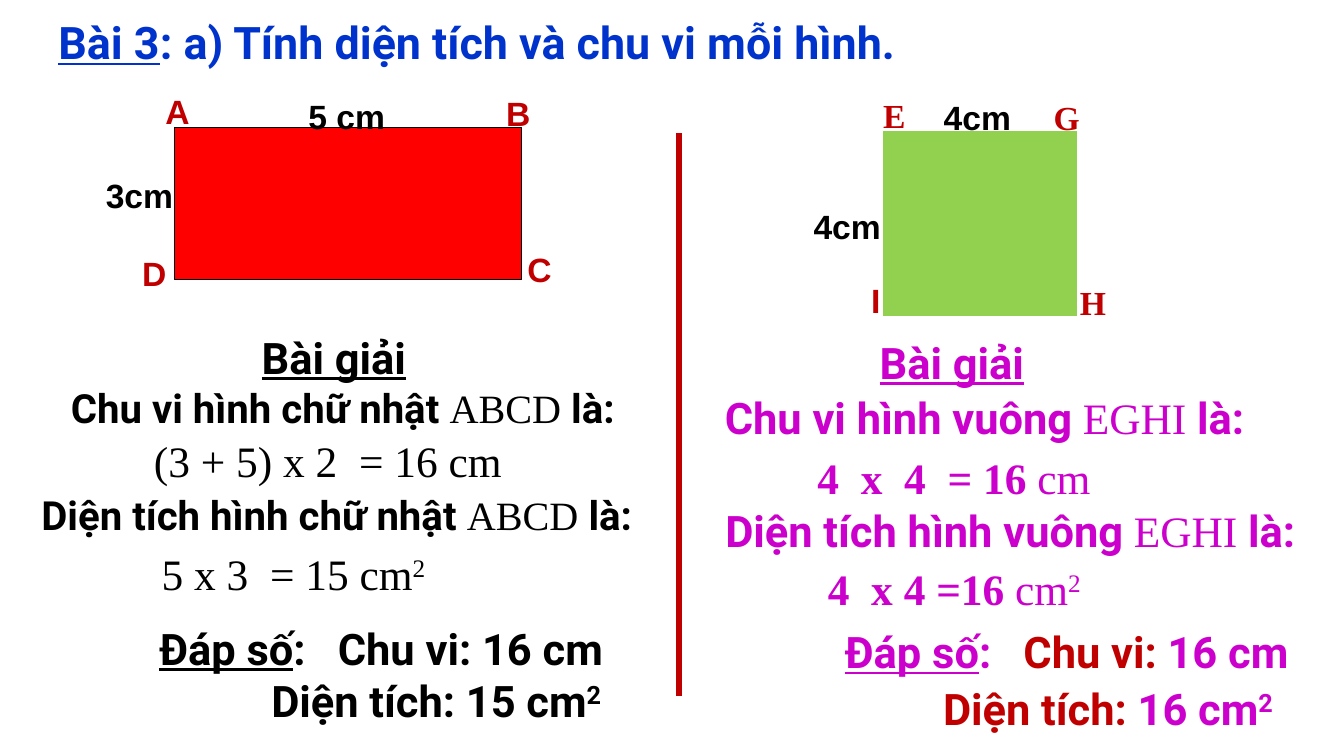
from dataclasses import dataclass
from lxml.etree import SubElement
from pptx import Presentation
from pptx.dml.color import RGBColor
from pptx.enum.shapes import MSO_CONNECTOR, MSO_SHAPE
from pptx.enum.text import PP_ALIGN as Align
from pptx.oxml.ns import qn
from pptx.util import Inches, Pt


@dataclass(frozen=True)
class Theme:
    blue: str = "0033CC"
    black: str = "000000"
    white: str = "FFFFFF"
    pink: str = "CC00CC"
    dark: str = "C00000"
    red: str = "FF0000"
    green: str = "92D050"
    sans: str = "Roboto"
    serif: str = "Times New Roman"
    plain: str = "Arial"
    title: float = 32
    body: float = 31
    small: float = 28.7
    label: float = 24


T = Theme()
# All places are left, top, width, height in percent of the slide.
# Run marks: b bold, u underline, t serif, s superscript, d dark red.
TITLE = ((3.6, 1.33, 85.15, 8.53),
         [("Bài 3", "bu"), (": a) Tính diện tích và chu vi mỗi hình.", "b")])

FIGURES = [
    ((12.98, 16.93, 25.81, 20), T.red, T.black, 0.75),
    ((65.64, 17.2, 14.55, 24.8), T.green, T.white, 1.5),
]

LABEL_H = 7.2
LABELS = [  # text, left, top, width, font
    ("A", 11.33, 11.07, 3.3, T.plain),
    ("B", 36.68, 11.33, 3.68, T.plain),
    ("C", 38.26, 32, 4.28, T.plain),
    ("D", 9.6, 32.53, 3.3, T.plain),
    ("E", 64.74, 11.6, 4.28, T.serif),
    ("G", 77.42, 11.87, 3.6, T.serif),
    ("H", 79.37, 36.4, 5.03, T.serif),
    ("I", 63.84, 36.13, 3.98, T.plain),
]
SIDES = [
    ("5 cm", 21.98, 11.73, 12.83, T.plain),
    ("3cm", 6.9, 22.27, 7.43, T.plain),
    ("4cm", 69.24, 11.87, 7.73, T.plain),
    ("4cm", 59.56, 26.27, 8.7, T.plain),
]

HEAD = [("Bài giải", "bu")]
LEFT = [  # place, line spacing, size, runs
    ((13.13, 43.6, 23.4, 8.93), 0.9, T.body, HEAD),
    ((0.9, 50.53, 49.21, 8), 0.9, T.small,
     [("Chu vi hình chữ nhật ", "b"), ("ABCD ", "t"), ("là:", "b")]),
    ((7.43, 57.87, 33.9, 7.87), 0.8, T.body, [("(3 + 5) x 2  = 16 cm", "t")]),
    ((0, 64.67, 50.11, 8.53), 0.9, T.small,
     [("Diện tích hình chữ nhật ", "b"), ("ABCD ", "t"), ("là:", "b")]),
    ((5.7, 72.27, 32.26, 9.33), 0.9, T.body,
     [("5 x 3  = 15 cm", "t"), ("2", "ts")]),
]
RIGHT = [
    ((63.47, 44.27, 14.7, 8.93), 0.9, T.body, HEAD),
    ((47.4, 52.13, 51.69, 8), 0.8, T.body,
     [("Chu vi hình vuông ", "b"), ("EGHI ", "t"), ("là:", "b")]),
    ((58.59, 59.47, 24.76, 7.6), 0.9, T.body,
     [("4  x  4  = 16 ", "tb"), ("cm", "t")]),
    ((50.34, 66.53, 49.66, 8.93), 0.9, T.body,
     [("Diện tích hình vuông ", "b"), ("EGHI ", "t"), ("là:", "b")]),
    ((56.19, 73.47, 29.63, 9.73), 1, T.body,
     [("4  x 4 =16 ", "tb"), ("cm", "t"), ("2", "ts")]),
]

TAB = 13.28
ANSWERS = [  # place, colour, line spacing, gap, second indent, lines
    ((10.88, 81.33, 37.7, 13.47), T.black, 1, 0, 8.33,
     [[("Đáp số", "bu"), (":\tChu vi: 16 cm", "b")],
      [("Diện tích: 15 cm", "b"), ("2", "bs")]]),
    ((61.89, 82.53, 37.88, 13.87), T.pink, 0.9, 7.5, 7.3,
     [[("Đáp số", "bu"), (":\t", "b"), ("Chu vi: ", "bd"), ("16 cm", "b")],
      [("Diện tích: ", "bd"), ("16 cm", "b"), ("2", "bs")]]),
]
RULE = (50.5, 17.6, 92.13)

deck = Presentation()
deck.slide_width, deck.slide_height = Inches(13.33), Inches(7.5)
slide = deck.slides.add_slide(deck.slide_layouts[6])
shapes = slide.shapes


def across(share):
    return int(deck.slide_width * share / 100)


def down(share):
    return int(deck.slide_height * share / 100)


def box(place):
    x, y, w, h = place
    return across(x), down(y), across(w), down(h)


def rgb(code):
    return RGBColor.from_string(code)


def fill_line(para, runs, size, color, font=T.sans):
    for text, marks in runs:
        run = para.add_run()
        run.text = text
        face = run.font
        face.name = T.serif if "t" in marks else font
        face.size = Pt(size)
        face.bold = "b" in marks
        face.underline = "u" in marks
        face.color.rgb = rgb(T.dark if "d" in marks else color)
        if "s" in marks:
            run._r.get_or_add_rPr().set("baseline", "30000")


def add_text(place, lines, size, color, font=T.sans, align=Align.LEFT,
             space=1, pad=(0.13, 0.07)):
    frame = shapes.add_textbox(*box(place)).text_frame
    frame.word_wrap = True
    frame.margin_left = frame.margin_right = Inches(pad[0])
    frame.margin_top = frame.margin_bottom = Inches(pad[1])
    for i, runs in enumerate(lines):
        para = frame.add_paragraph() if i else frame.paragraphs[0]
        para.alignment = align
        para.line_spacing = float(space)
        fill_line(para, runs, size, color, font)
    return frame.paragraphs


def set_tab(para, place):
    tabs = SubElement(para._p.get_or_add_pPr(), qn("a:tabLst"))
    SubElement(tabs, qn("a:tab"), pos=str(across(place)), algn="l")


def add_answer(place, color, space, gap, indent, lines):
    first, last = add_text(place, lines, T.body, color, space=space)
    set_tab(first, TAB)
    last.space_before = Pt(gap)
    last._p.get_or_add_pPr().set("marL", str(across(indent)))


for place, fill, edge, width in FIGURES:
    figure = shapes.add_shape(MSO_SHAPE.RECTANGLE, *box(place))
    figure.shadow.inherit = False
    figure.fill.solid()
    figure.fill.fore_color.rgb = rgb(fill)
    figure.line.color.rgb = rgb(edge)
    figure.line.width = Pt(width)

for group, color in ((LABELS, T.dark), (SIDES, T.black)):
    for text, x, y, w, font in group:
        add_text((x, y, w, LABEL_H), [[(text, "b")]], T.label, color, font)

for group, color in ((LEFT, T.black), (RIGHT, T.pink)):
    for place, space, size, runs in group:
        add_text(place, [runs], size, color, align=Align.CENTER, space=space)

for answer in ANSWERS:
    add_answer(*answer)

x, top, foot = RULE
rule = shapes.add_connector(MSO_CONNECTOR.STRAIGHT, across(x), down(top),
                            across(x), down(foot))
rule.line.color.rgb = rgb(T.dark)
rule.line.width = Pt(4.5)
SubElement(rule._element.spPr, qn("a:effectLst"))

place, runs = TITLE
add_text(place, [runs], T.title, T.blue, pad=(0.1, 0.05))

deck.save("out.pptx")
